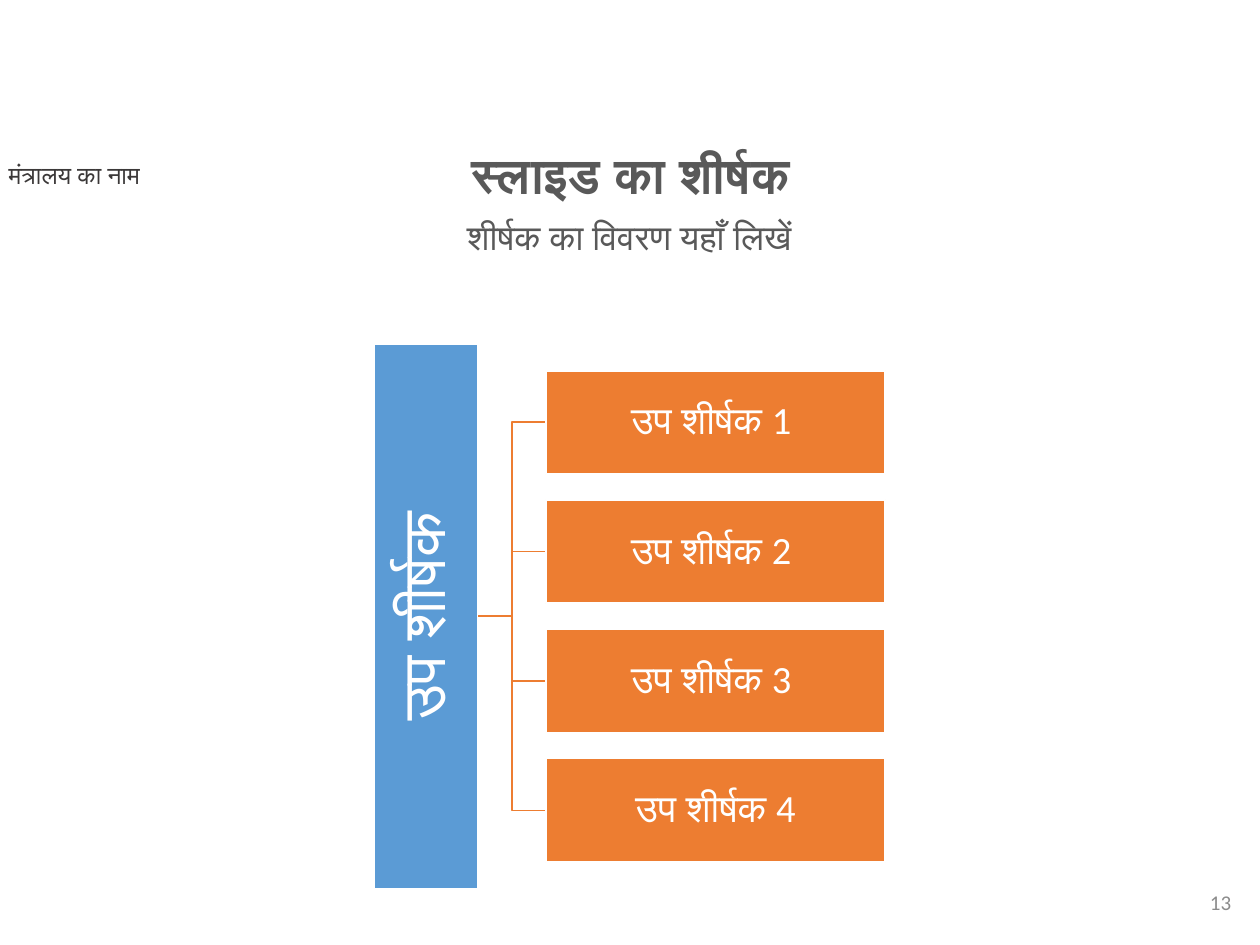
import pptx
import pptx.dml.color
import pptx.enum.shapes
import pptx.enum.text
import pptx.util

Pt = pptx.util.Pt
ALIGN = pptx.enum.text.PP_ALIGN
ANCHOR = pptx.enum.text.MSO_ANCHOR


def color(hex_string):
    return pptx.dml.color.RGBColor.from_string(hex_string)


class SlideBuilder:
    font_name = "Calibri"
    white, blue, orange = "FFFFFF", "5B9BD5", "ED7D31"
    dark, gray, light_gray = "3B3838", "595959", "8C8C8C"

    def __init__(self, slide):
        self.slide = slide

    def fill_text(self, shape, text, size, font_color, align, anchor, spacing=None, bold=False):
        frame = shape.text_frame
        frame.word_wrap = True
        frame.vertical_anchor = anchor
        paragraph = frame.paragraphs[0]
        paragraph.text = text
        paragraph.alignment = align
        if spacing:
            paragraph.line_spacing = spacing
        paragraph.font.name = self.font_name
        paragraph.font.size = Pt(size)
        paragraph.font.bold = bold
        paragraph.font.color.rgb = color(font_color)

    def text(self, left, top, width, height, text, size, font_color,
             align=ALIGN.CENTER, anchor=ANCHOR.TOP, spacing=None, bold=False):
        shape = self.slide.shapes.add_textbox(Pt(left), Pt(top), Pt(width), Pt(height))
        self.fill_text(shape, text, size, font_color, align, anchor, spacing, bold)

    def box(self, left, top, width, height, text, size, fill, rotation=0):
        shape = self.slide.shapes.add_shape(
            pptx.enum.shapes.MSO_SHAPE.RECTANGLE, Pt(left), Pt(top), Pt(width), Pt(height))
        shape.shadow.inherit = False
        shape.rotation = rotation
        shape.fill.solid()
        shape.fill.fore_color.rgb = color(fill)
        shape.line.color.rgb = color(self.white)
        shape.line.width = Pt(1)
        frame = shape.text_frame
        frame.margin_left = frame.margin_right = Pt(1.4)
        frame.margin_top = frame.margin_bottom = Pt(1.4)
        self.fill_text(shape, text, size, self.white, ALIGN.CENTER, ANCHOR.MIDDLE, 0.9)

    def branch(self, start_x, start_y, end_x, end_y):
        middle_x = (start_x + end_x) / 2
        builder = self.slide.shapes.build_freeform(Pt(start_x), Pt(start_y))
        corners = [(middle_x, start_y), (middle_x, end_y), (end_x, end_y)]
        builder.add_line_segments([(Pt(x), Pt(y)) for x, y in corners], close=False)
        shape = builder.convert_to_shape()
        shape.shadow.inherit = False
        shape.fill.background()
        shape.line.color.rgb = color(self.orange)
        shape.line.width = Pt(1)


def main():
    presentation = pptx.Presentation()
    presentation.slide_width, presentation.slide_height = Pt(720), Pt(540)
    builder = SlideBuilder(presentation.slides.add_slide(presentation.slide_layouts[6]))

    # Ministry name, slide number and headings
    builder.text(-2.2, 87.8, 157, 24.5, "मंत्रालय का नाम", 14, builder.dark, ALIGN.LEFT)
    builder.text(548.6, 501.1, 162, 28.8, "13", 12, builder.light_gray,
                 ALIGN.RIGHT, ANCHOR.MIDDLE)
    builder.text(105.1, 122.4, 509, 45.4, "शीर्षक का विवरण यहाँ लिखें", 20, builder.gray,
                 spacing=0.9)
    builder.text(133.9, 82.8, 452.9, 33.8, "स्लाइड का शीर्षक", 28, builder.gray,
                 spacing=0.9, bold=True)

    # Hierarchy: one upright root, four equally spaced children
    center_y, thickness, pitch = 352.2, 59.1, 73.9
    root_x, root_length = 243.3, 311.3
    child_left, child_width = 311.9, 194
    labels = ["उप शीर्षक 1 ", "उप शीर्षक 2 ", "उप शीर्षक 3 ", "उप शीर्षक 4"]
    child_centers = [center_y + (index - (len(labels) - 1) / 2) * pitch
                     for index in range(len(labels))]

    # Branches lie behind the boxes
    for child_y in reversed(child_centers):
        builder.branch(root_x + thickness / 2, center_y, child_left, child_y)

    builder.box(root_x - root_length / 2, center_y - thickness / 2, root_length, thickness,
                "उप शीर्षक", 35, builder.blue, rotation=270)
    for label, child_y in zip(labels, child_centers):
        builder.box(child_left, child_y - thickness / 2, child_width, thickness,
                    label, 22, builder.orange)

    presentation.save("out.pptx")


if __name__ == "__main__":
    main()
